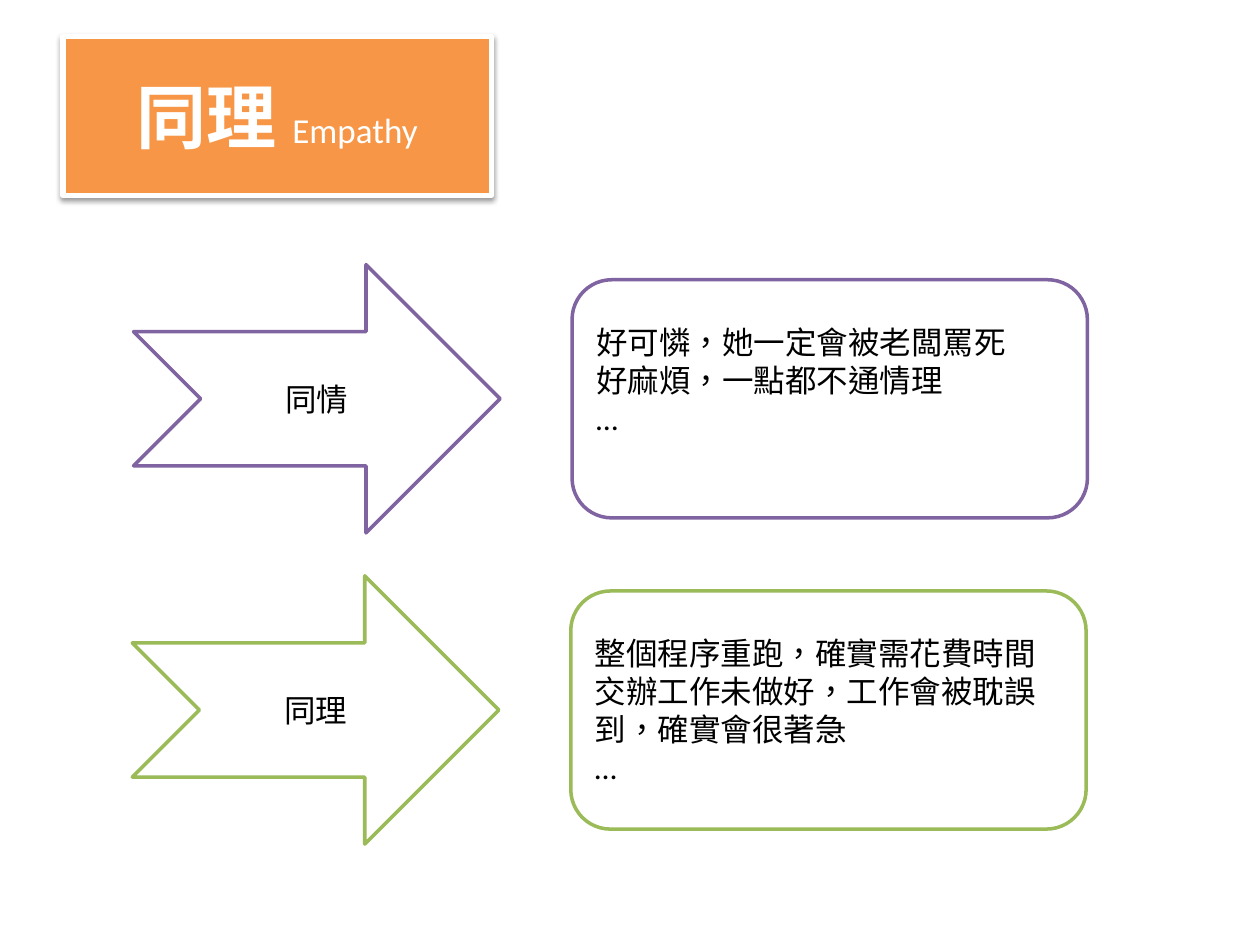
from lxml.etree import SubElement as Sub
from pptx import Presentation
from pptx.dml.color import RGBColor as Rgb
from pptx.enum.shapes import MSO_SHAPE as Kind
from pptx.enum.text import MSO_ANCHOR as Anchor, PP_ALIGN as Align
from pptx.oxml.ns import qn
from pptx.util import Emu, Inches, Pt

HUES = {"orange": "F79646", "purple": "8064A2", "green": "9BBB59",
        "white": "FFFFFF", "black": "000000"}
WIDE, HIGH = Inches(10), Inches(7.5)
ROWS = [
    ("purple", "同情", 1.06, 2.1, 0.35,
     ["好可憐，她一定會被老闆罵死", "好麻煩，一點都不通情理", "…"]),
    ("green", "同理", 1.05, 4.57, 0.05,
     ["整個程序重跑，確實需花費時間", "交辦工作未做好，工作會被耽誤到，確實會很著急", "…"]),
]


def paint(shape, fill, line, width):
    """Give a shape its fill and outline."""
    shape.fill.solid()
    shape.fill.fore_color.rgb = Rgb.from_string(HUES[fill])
    shape.line.color.rgb = Rgb.from_string(HUES[line])
    shape.line.width = Pt(width)


def add_run(para, text, size, hue="black", face="Calibri", bold=False):
    """Add one formatted run to a paragraph."""
    run = para.add_run()
    run.text = text
    font = run.font
    font.size, font.name, font.bold = Pt(size), face, bold
    font.color.rgb = Rgb.from_string(HUES[hue])
    props = run._r.get_or_add_rPr()
    props.set("lang", "zh-TW")
    if face != "Calibri":
        props.find(qn("a:latin")).addnext(props.makeelement(qn("a:ea"), typeface=face))


def add_shade(shape):
    """Drop a soft shadow straight below a shape."""
    effects = Sub(shape._element.spPr, qn("a:effectLst"))
    shade = Sub(effects, qn("a:outerShdw"), blurRad=str(Pt(3.1)), dist=str(Pt(1.6)),
                dir="5400000", rotWithShape="0")
    tint = Sub(shade, qn("a:srgbClr"), val=HUES["black"])
    Sub(tint, qn("a:alpha"), val="38000")


def set_title(title):
    """Turn the title into a framed orange plate."""
    title.left, title.top = Emu(int(WIDE * 0.05)), Inches(0.29)
    title.width, title.height = Emu(int(WIDE * 0.34)), Inches(1.26)
    paint(title, "orange", "white", 3)
    add_shade(title)
    frame = title.text_frame
    frame.vertical_anchor = Anchor.MIDDLE
    para = frame.paragraphs[0]
    para.alignment = Align.CENTER
    add_run(para, "同理 ", 40, "white", "Noto Sans CJK SC", True)
    add_run(para, "Empathy", 20, "white")


def add_box(group, kind, area, hue, lines, align, base=0.05):
    """Add an outlined shape with one paragraph per line."""
    box = group.shapes.add_shape(kind, *map(Inches, area))
    box.shadow.inherit = False
    paint(box, "white", hue, 2)
    frame = box.text_frame
    frame.word_wrap = True
    frame.vertical_anchor = Anchor.MIDDLE
    frame.margin_bottom = Inches(base)
    for num, line in enumerate(lines):
        para = frame.add_paragraph() if num else frame.paragraphs[0]
        para.alignment = align
        add_run(para, line, 18)


def add_row(slide, hue, label, left, top, base, lines):
    """Group a labelled arrow with the box it points to."""
    group = slide.shapes.add_group_shape()
    add_box(group, Kind.NOTCHED_RIGHT_ARROW, (left, top, 2.91, 2.13),
            hue, [label], Align.CENTER)
    add_box(group, Kind.FLOWCHART_ALTERNATE_PROCESS, (left + 3.48, top + 0.12, 4.09, 1.89),
            hue, lines, Align.LEFT, base)


def main():
    """Build the slide and save it."""
    deck = Presentation()
    deck.slide_width, deck.slide_height = WIDE, HIGH
    slide = deck.slides.add_slide(deck.slide_layouts[5])
    set_title(slide.shapes.title)
    for row in ROWS:
        add_row(slide, *row)
    deck.save("out.pptx")


if __name__ == "__main__":
    main()
